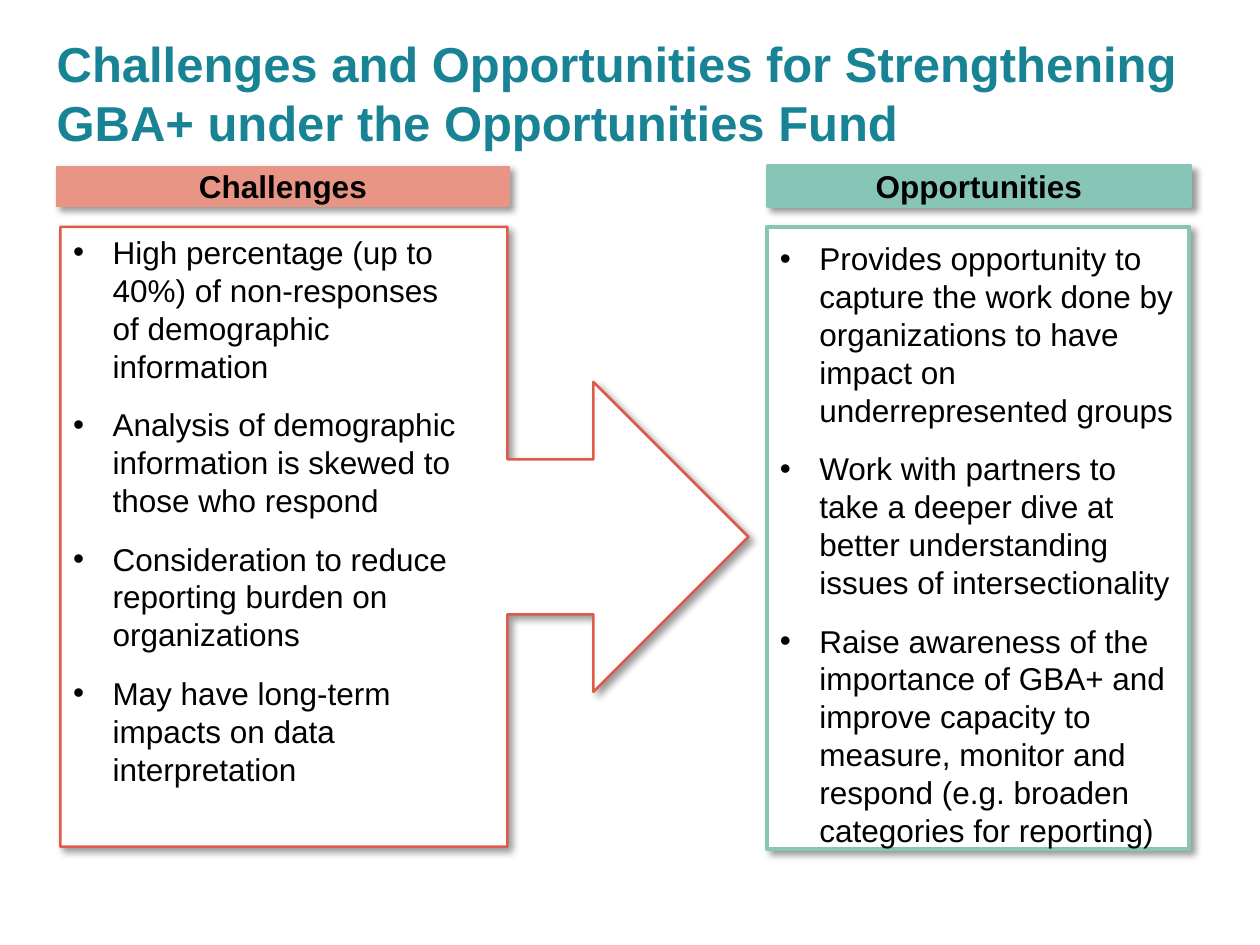
import pptx
import pptx.util
import pptx.dml.color
import pptx.enum.shapes
import pptx.enum.text
import pptx.oxml
import pptx.oxml.ns

Pt = pptx.util.Pt
RGB = pptx.dml.color.RGBColor
SHAPE = pptx.enum.shapes.MSO_SHAPE
ALIGN = pptx.enum.text.PP_ALIGN
ANCHOR = pptx.enum.text.MSO_ANCHOR

TEAL = RGB(0x18, 0x83, 0x94)
CORAL = RGB(0xE9, 0x95, 0x86)
RED = RGB(0xDD, 0x5B, 0x49)
GREEN = RGB(0x87, 0xC6, 0xB6)
WHITE = RGB(0xFF, 0xFF, 0xFF)
BLACK = RGB(0x00, 0x00, 0x00)

SHADOW = (
    f'<a:effectLst {pptx.oxml.ns.nsdecls("a")}>'
    '<a:outerShdw blurRad="50800" dist="38100" dir="2700000" algn="tl" rotWithShape="0">'
    '<a:srgbClr val="000000"><a:alpha val="40000"/></a:srgbClr>'
    '</a:outerShdw></a:effectLst>'
)


def add_panel(kind, box, fill, line, width):
    """Add a filled, outlined shape with a soft shadow to the lower right."""
    sp = s.shapes.add_shape(kind, *map(Pt, box))
    sp.fill.solid()
    sp.fill.fore_color.rgb = fill
    sp.line.color.rgb = line
    sp.line.width = Pt(width)
    sp._element.spPr.append(pptx.oxml.parse_xml(SHADOW))
    return sp


def write(p, text, color, **font):
    r = p.add_run()
    r.text = text
    r.font.name = "Arial"
    r.font.color.rgb = color
    for name, value in font.items():
        setattr(r.font, name, value)


prs = pptx.Presentation()
prs.slide_width, prs.slide_height = Pt(720), Pt(540)
s = prs.slides.add_slide(prs.slide_layouts[3])
title, challenges, opportunities = s.placeholders

# Title
title.left, title.top, title.width, title.height = map(Pt, (25.2, 31.7, 670.3, 42.5))
tf = title.text_frame
for name, value in {"word_wrap": True, "vertical_anchor": ANCHOR.MIDDLE,
                    "auto_size": pptx.enum.text.MSO_AUTO_SIZE.NONE}.items():
    setattr(tf, name, value)
p = tf.paragraphs[0]
p.alignment = ALIGN.LEFT
p.line_spacing = Pt(33.7)
write(p, "Challenges and Opportunities for Strengthening GBA+ under the Opportunities Fund",
      TEAL, size=Pt(28), bold=True)

# Column headings
for text, left, width, color, line in (
    ("Challenges", 32.4, 258.5, CORAL, 0.75),
    ("Opportunities", 438.5, 241.9, GREEN, 2),
):
    sp = add_panel(SHAPE.RECTANGLE, (left, 95, width, 23), color, color, line)
    sp.text_frame.vertical_anchor = ANCHOR.MIDDLE
    p = sp.text_frame.paragraphs[0]
    p.alignment = ALIGN.CENTER
    write(p, text, BLACK, size=Pt(18), bold=True)

# Panels behind the lists; the callout is turned so that its arrow points right
add_panel(SHAPE.RECTANGLE, (438.5, 129.6, 241.2, 355.7), WHITE, GREEN, 2.25)
callout = add_panel(SHAPE.DOWN_ARROW_CALLOUT, (54, 110.2, 354.2, 393.1), WHITE, RED, 1.5)
callout.rotation = 270

# Bulleted lists, brought in front of the panels
LISTS = (
    (challenges, (34.6, 129.6, 238.3, 349.2), (
        "High percentage (up to 40%) of non-responses of demographic information",
        "Analysis of demographic information is skewed to those who respond",
        "Consideration to reduce reporting burden on organizations",
        "May have long-term impacts on data interpretation",
    )),
    (opportunities, (438.5, 133.2, 241.2, 352), (
        "Provides opportunity to capture the work done by organizations to have "
        "impact on underrepresented groups",
        "Work with partners to take a deeper dive at better understanding "
        "issues of intersectionality",
        "Raise awareness of the importance of GBA+ and improve capacity to measure, "
        "monitor and respond (e.g. broaden categories for reporting)",
    )),
)
for sp, box, items in LISTS:
    sp.left, sp.top, sp.width, sp.height = map(Pt, box)
    s.shapes._spTree.append(sp._element)
    tf = sp.text_frame
    tf.word_wrap = True
    tf.auto_size = pptx.enum.text.MSO_AUTO_SIZE.NONE
    for i, text in enumerate(items):
        p = tf.add_paragraph() if i else tf.paragraphs[0]
        pPr = p._p.get_or_add_pPr()
        pPr.set("marL", str(Pt(22.5)))
        pPr.set("indent", str(-Pt(22.5)))
        for name, value in {"alignment": ALIGN.LEFT, "line_spacing": Pt(21.6),
                            "space_before": Pt(12 if i else 0),
                            "space_after": Pt(0)}.items():
            setattr(p, name, value)
        write(p, text, BLACK, size=Pt(18))

prs.save("out.pptx")
